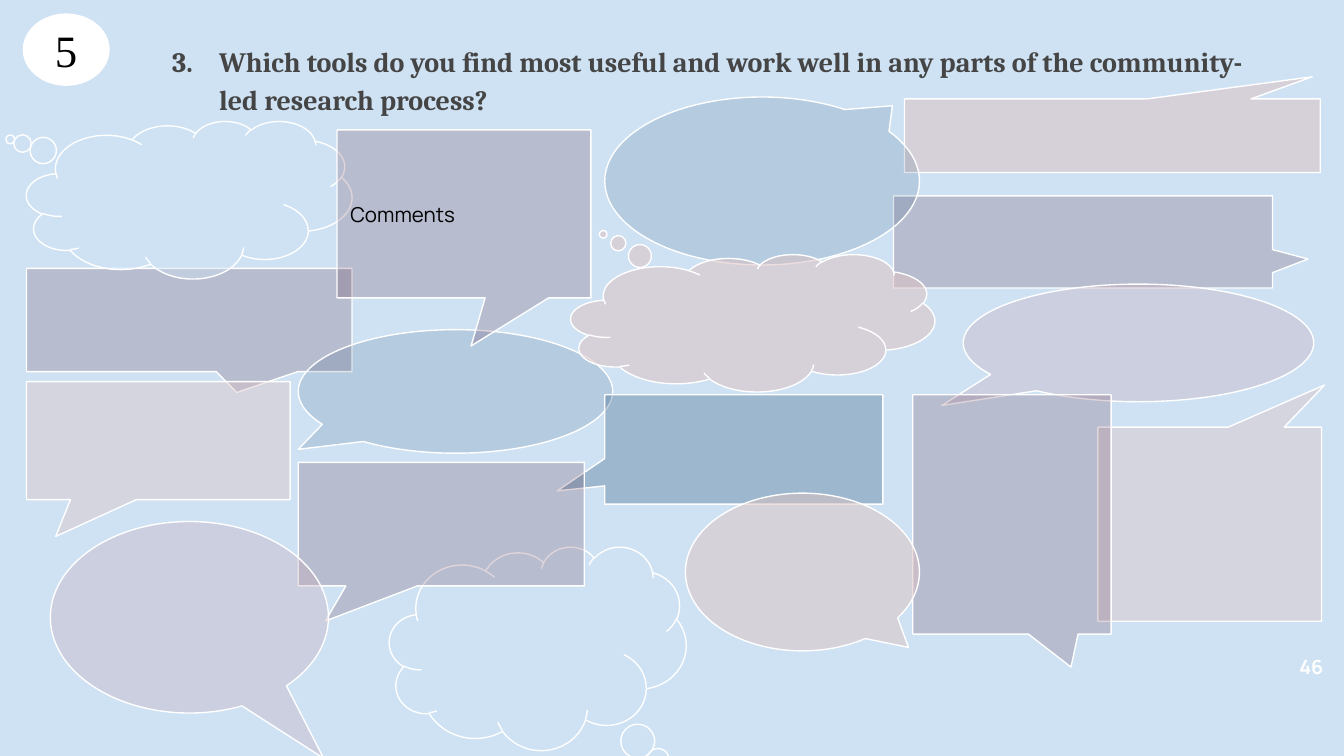
from lxml import etree
from pptx import Presentation
from pptx.dml.color import RGBColor
from pptx.enum.shapes import MSO_SHAPE
from pptx.enum.text import MSO_ANCHOR, MSO_AUTO_SIZE, PP_ALIGN
from pptx.oxml.ns import qn
from pptx.util import Pt

RECT = MSO_SHAPE.RECTANGULAR_CALLOUT
ROUND = MSO_SHAPE.ROUNDED_RECTANGULAR_CALLOUT
OVAL = MSO_SHAPE.OVAL_CALLOUT
CLOUD = MSO_SHAPE.CLOUD_CALLOUT
ELLIPSE = MSO_SHAPE.OVAL
MIDDLE = MSO_ANCHOR.MIDDLE
LEFT, CENTER, RIGHT = PP_ALIGN.LEFT, PP_ALIGN.CENTER, PP_ALIGN.RIGHT

SKY = RGBColor(0xCF, 0xE2, 0xF3)
ROSE = RGBColor(0xDD, 0xC3, 0xC3)
MAROON = RGBColor(0x4C, 0x11, 0x30)
NAVY = RGBColor(0x07, 0x37, 0x63)
MAUVE = RGBColor(0xC8, 0xAC, 0xBA)
GRAY = RGBColor(0x45, 0x45, 0x45)
WHITE = RGBColor(0xFF, 0xFF, 0xFF)
BLACK = RGBColor(0, 0, 0)

INSET = 7.2

# kind, (left, top, width, height), pointer tip, fill, opacity in percent, text
CALLOUTS = [
    (RECT, (484.6, 53, 222.7, 39.4), (0.481, -0.801), ROSE, 54, ""),
    (ROUND, (14.2, 143.8, 174.4, 55.3), (0.146, 0.702), MAROON, 18, ""),
    (OVAL, (159.8, 176.6, 168.5, 66.2), (-0.5, 0.469), NAVY, 13, ""),
    (CLOUD, (208.6, 292.8, 159, 109), (0.445, 0.603), SKY, 43, ""),
    (CLOUD, (14.2, 64.8, 174.4, 84.4), (-0.55, -0.383), SKY, 43, ""),
    (RECT, (14.2, 204.5, 141.2, 63.2), (-0.389, 0.812), ROSE, 41, ""),
    (ROUND, (478.7, 104.9, 203, 49.4), (0.594, 0.186), MAROON, 18, ""),
    (OVAL, (324, 52, 168.6, 90), (0.414, -0.448), NAVY, 13, ""),
    (ROUND, (180.6, 69.6, 136, 90), (0.028, 0.786), MAROON, 18, "Comments"),
    (CLOUD, (305.8, 136.2, 195, 73.6), (-0.411, -0.645), ROSE, 54, ""),
    (RECT, (324, 211.5, 149, 58.6), (-0.671, 0.379), NAVY, 25, ""),
    (OVAL, (516, 152.2, 187.8, 63), (-0.561, 0.532), MAUVE, 35, ""),
    (ROUND, (588.2, 228.8, 119.8, 104), (0.514, -0.717), ROSE, 41, ""),
    (RECT, (489, 211.5, 106.2, 128.2), (0.298, 0.638), MAROON, 18, ""),
    (OVAL, (367.2, 264.2, 125.4, 84.5), (0.453, 0.478), ROSE, 51, ""),
    (ROUND, (159.8, 247.7, 153.2, 66.2), (-0.405, 0.784), MAROON, 18, ""),
    (OVAL, (27, 279.4, 149, 102.6), (0.483, 0.737), MAUVE, 35, ""),
]


def write_text(box, text, *, font, size, color, bold=False, align=LEFT):
    frame = box.text_frame
    frame.word_wrap = True
    frame.auto_size = MSO_AUTO_SIZE.NONE
    frame.vertical_anchor = MIDDLE
    frame.margin_left = frame.margin_right = Pt(INSET)
    frame.margin_top = frame.margin_bottom = Pt(INSET)
    para = frame.paragraphs[0]
    para.alignment = align
    span = para.add_run()
    span.text = text
    span.font.name = font
    span.font.size = Pt(size)
    span.font.bold = bold
    span.font.color.rgb = color
    return para


def number_paragraph(para, start, color, margin, indent):
    """Turn on automatic numbering with a hanging indent."""
    properties = para._p.get_or_add_pPr()
    properties.set("marL", str(Pt(margin)))
    properties.set("indent", str(Pt(indent)))
    bullet_color = etree.SubElement(properties, qn("a:buClr"))
    etree.SubElement(bullet_color, qn("a:srgbClr"), val=str(color))
    etree.SubElement(properties, qn("a:buAutoNum"), type="arabicPeriod", startAt=str(start))


def add_title(page, text):
    title = page.shapes.title
    title.left, title.top, title.width, title.height = Pt(74.2), Pt(21.6), Pt(607.7), Pt(40.3)
    para = write_text(title, text, font="Cambria", size=15, color=GRAY, bold=True)
    para.line_spacing = 1.15
    number_paragraph(para, 3, GRAY, 36, -25.2)


def add_filled_shape(page, kind, place, color):
    shape = page.shapes.add_shape(kind, *map(Pt, place))
    shape.shadow.inherit = False
    shape.fill.solid()
    shape.fill.fore_color.rgb = color
    return shape


def add_callout(page, kind, place, tip, color, opacity, text):
    shape = add_filled_shape(page, kind, place, color)
    shade = shape.fill._xPr.find(qn("a:solidFill"))[0]
    etree.SubElement(shade, qn("a:alpha"), val=str(opacity * 1000))
    shape.line.color.rgb = WHITE
    shape.line.width = Pt(0.75)
    shape.adjustments[0], shape.adjustments[1] = tip
    if kind == ROUND:
        shape.adjustments[2] = 0
    if text:
        write_text(shape, text, font="Manrope", size=11, color=BLACK)


def add_badge(page, text):
    badge = add_filled_shape(page, ELLIPSE, (12.2, 7.2, 46.6, 38.8), WHITE)
    badge.line.fill.background()
    write_text(badge, text, font="Times New Roman", size=24, color=BLACK, align=CENTER)


def add_page_number(page, text):
    box = page.shapes.add_textbox(Pt(672), Pt(341), Pt(44), Pt(32))
    write_text(box, text, font="Manrope", size=10.5, color=WHITE, bold=True, align=RIGHT)


def main():
    deck = Presentation()
    deck.slide_width, deck.slide_height = Pt(720), Pt(405)
    page = deck.slides.add_slide(deck.slide_layouts[5])
    page.background.fill.solid()
    page.background.fill.fore_color.rgb = SKY
    add_title(page, "Which tools do you find most useful and work well in any parts "
                    "of the community-led research process?")
    for callout in CALLOUTS:
        add_callout(page, *callout)
    add_badge(page, "5")
    add_page_number(page, "46")
    deck.save("out.pptx")


if __name__ == "__main__":
    main()
